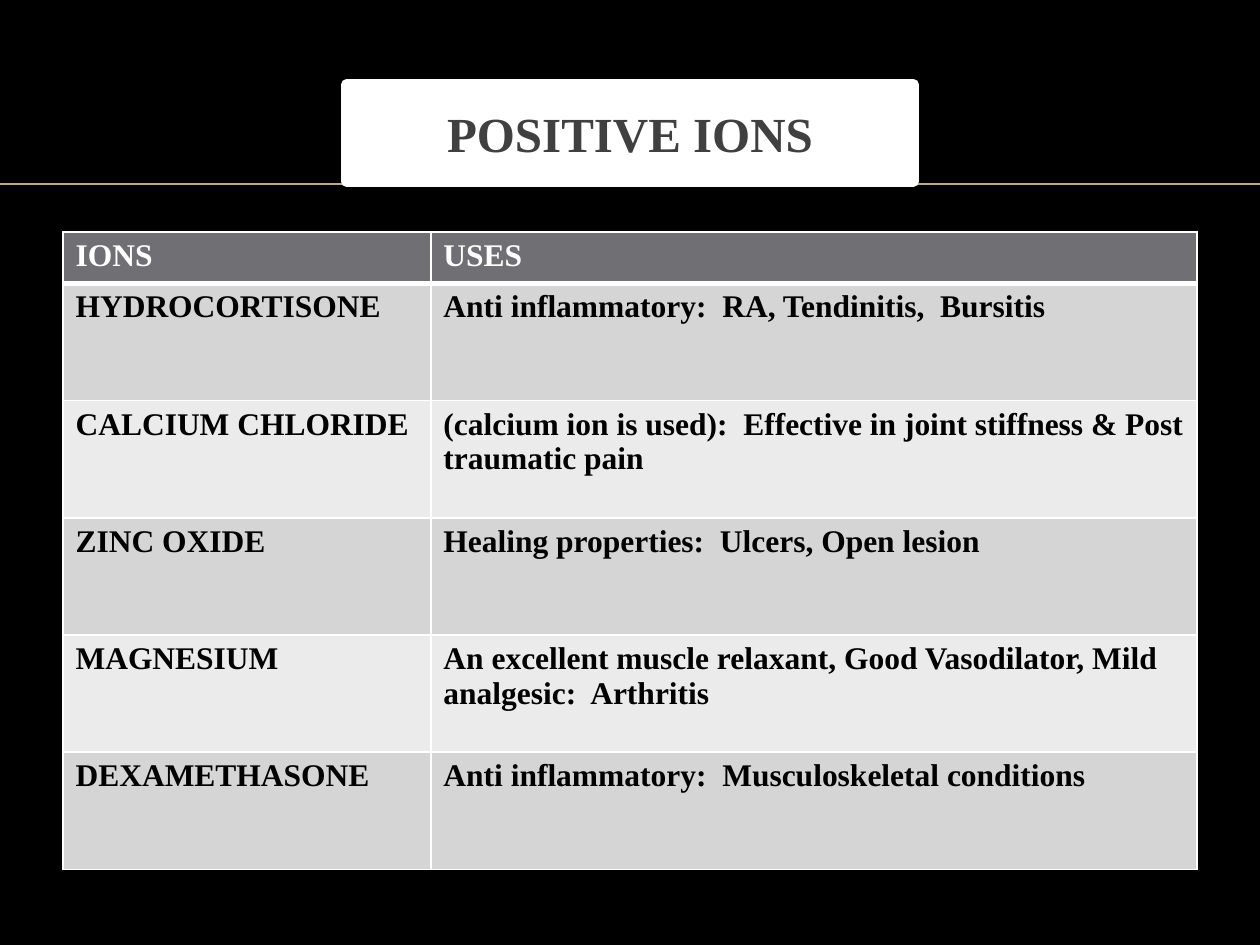
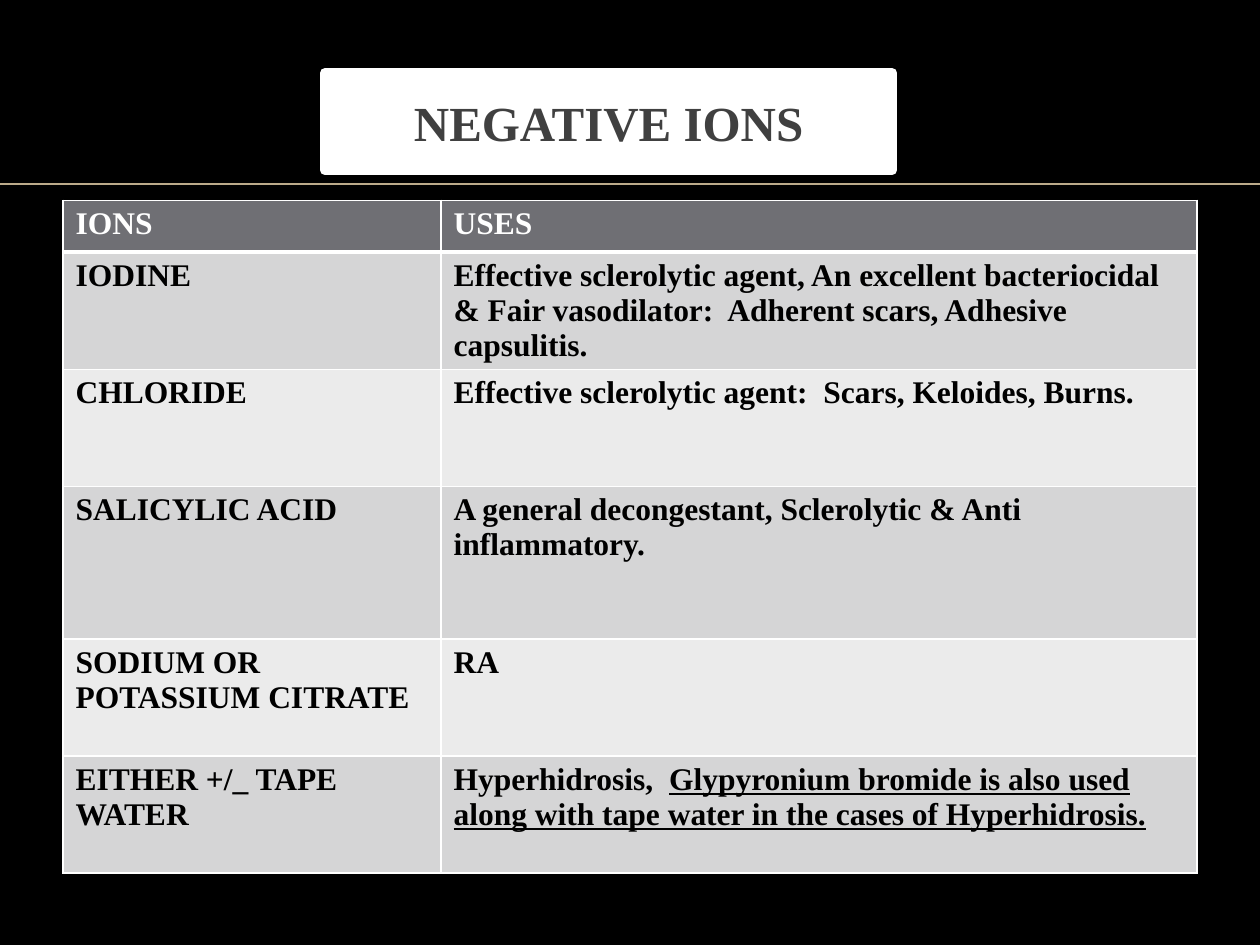
"""Build two slides with tables of positive and negative ions and their uses."""
import lxml.etree
import pptx
import pptx.dml.color
import pptx.enum.shapes
import pptx.enum.text
import pptx.oxml.ns
import pptx.util

Inches = pptx.util.Inches
Pt = pptx.util.Pt
qn = pptx.oxml.ns.qn
FONT = "Times New Roman"
HEX = {"back": "000000", "rule": "BBAA8A", "white": "FFFFFF", "title": "404040",
       "head": "6F6F74", "odd": "D5D5D6", "even": "EBEBEB", "ink": "000000"}
RGB = {name: pptx.dml.color.RGBColor.from_string(code) for name, code in HEX.items()}


def write(frame, text, size=18, color="ink", under=False):
    run = frame.paragraphs[0].add_run()
    run.text = text
    font = run.font
    font.name, font.size, font.bold = FONT, Pt(size), True
    font.color.rgb = RGB[color]
    if under:
        font.underline = True


def edge(cell, low):
    props = cell._tc.get_or_add_tcPr()
    for spot, side in enumerate("LRTB"):
        width = low if side == "B" else 1
        line = lxml.etree.Element(qn("a:ln" + side), w=str(Pt(width)))
        fill = lxml.etree.SubElement(line, qn("a:solidFill"))
        lxml.etree.SubElement(fill, qn("a:srgbClr"), val=HEX["white"])
        props.insert(spot, line)


PAGES = [
    {"title": "POSITIVE IONS", "spot": (2.75, 0.67), "top": 1.84,
     "cols": (2.92, 6.08), "tall": {},
     "rows": [
         ("HYDROCORTISONE", "Anti inflammatory:  RA, Tendinitis,  Bursitis"),
         ("CALCIUM CHLORIDE",
          "(calcium ion is used):  Effective in joint stiffness & Post traumatic pain"),
         ("ZINC OXIDE", "Healing properties:  Ulcers, Open lesion"),
         ("MAGNESIUM",
          "An excellent muscle relaxant, Good Vasodilator, Mild analgesic:  Arthritis"),
         ("DEXAMETHASONE", "Anti inflammatory:  Musculoskeletal conditions")]},
    {"title": "NEGATIVE IONS", "spot": (2.58, 0.58), "top": 1.59,
     "cols": (3, 6), "tall": {3: 1.21},
     "rows": [
         ("IODINE", "Effective sclerolytic agent, An excellent bacteriocidal & Fair "
          "vasodilator:  Adherent scars, Adhesive capsulitis."),
         ("CHLORIDE", "Effective sclerolytic agent:  Scars, Keloides, Burns."),
         ("SALICYLIC ACID", "A general decongestant, Sclerolytic & Anti  inflammatory."),
         ("SODIUM OR POTASSIUM CITRATE", "RA"),
         ("EITHER +/_ TAPE WATER", "Hyperhidrosis,  ")],
     "under": "Glypyronium bromide is also used along with tape water in the cases of "
              "Hyperhidrosis."},
]

deck = pptx.Presentation()
deck.slide_width, deck.slide_height = Inches(10), Inches(7.5)
back = deck.slide_master.background.fill
back.solid()
back.fore_color.rgb = RGB["back"]

for page in PAGES:
    slide = deck.slides.add_slide(deck.slide_layouts[5])
    shapes = slide.shapes
    rule = shapes.add_connector(pptx.enum.shapes.MSO_CONNECTOR.STRAIGHT,
                                Inches(0), Inches(1.46), Inches(10), Inches(1.46))
    rule.line.color.rgb = RGB["rule"]
    rule.line.width = Pt(1)
    lxml.etree.SubElement(rule._element.spPr, qn("a:effectLst"))

    rows = [("IONS", "USES")] + page["rows"]
    highs = [0.41] + [page["tall"].get(i, 0.93) for i in range(1, len(rows))]
    table = shapes.add_table(len(rows), 2, Inches(0.5), Inches(page["top"]),
                             Inches(9), Inches(sum(highs))).table
    for col, width in zip(table.columns, page["cols"]):
        col.width = Inches(width)
    for i, (row, high) in enumerate(zip(rows, highs)):
        table.rows[i].height = Inches(high)
        tone = "head" if i == 0 else "odd" if i % 2 else "even"
        for j, text in enumerate(row):
            cell = table.cell(i, j)
            cell.fill.solid()
            cell.fill.fore_color.rgb = RGB[tone]
            edge(cell, 3 if i == 0 else 1)
            write(cell.text_frame, text, color="ink" if i else "white")
    if "under" in page:
        write(table.cell(len(rows) - 1, 1).text_frame, page["under"], under=True)

    title = shapes.title
    title.left, title.top = [Inches(n) for n in page["spot"]]
    title.width, title.height = Inches(4.5), Inches(0.77)
    title.fill.solid()
    title.fill.fore_color.rgb = RGB["white"]
    title.line.color.rgb = RGB["white"]
    title.line.width = Pt(6)
    frame = title.text_frame
    frame.vertical_anchor = pptx.enum.text.MSO_ANCHOR.MIDDLE
    frame.paragraphs[0].alignment = pptx.enum.text.PP_ALIGN.CENTER
    frame.paragraphs[0].space_before = Pt(4)
    write(frame, page["title"], size=28, color="title")
    shapes._spTree.append(title._element)

deck.save("out.pptx")
